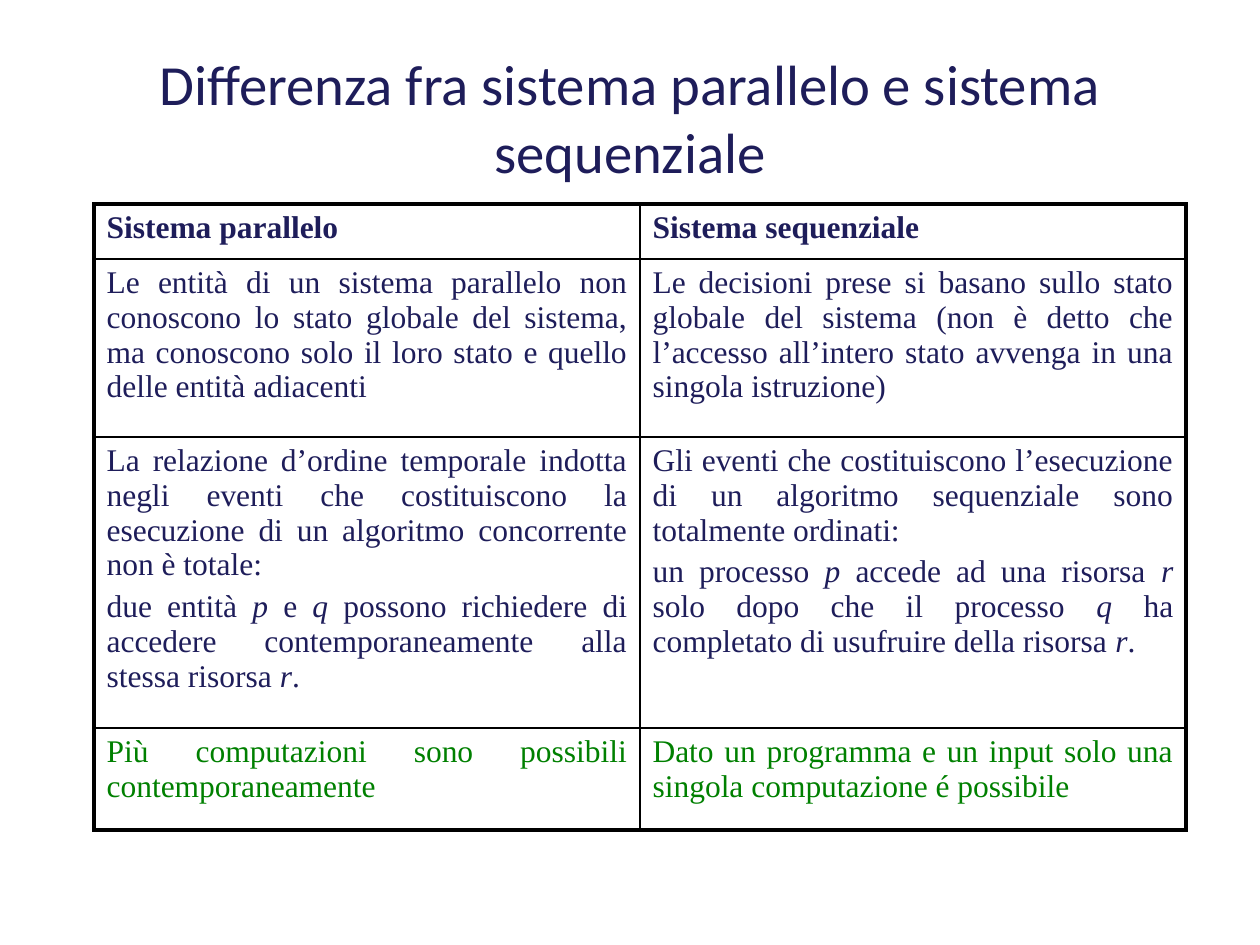
"""Build a slide comparing parallel and sequential systems in a table."""
import pptx
import pptx.dml.color
import pptx.enum.text
import pptx.oxml
import pptx.oxml.ns
import pptx.util

NAVY = pptx.dml.color.RGBColor(0x1E, 0x1D, 0x5A)
GREEN = pptx.dml.color.RGBColor(0x00, 0x80, 0x00)
BLACK = pptx.dml.color.RGBColor(0x00, 0x00, 0x00)
PX = 914400 // 126
THIN, THICK = 1, 2.25

COLUMNS = [546, 546]
ROWS = [
    (55, {"bold": True}, NAVY, [["Sistema parallelo"], ["Sistema sequenziale"]]),
    (178, {}, NAVY, [
        ["Le entità di un sistema parallelo non conoscono lo stato globale del sistema, "
         "ma conoscono solo il loro stato e quello delle entità adiacenti"],
        ["Le decisioni prese si basano sullo stato globale del sistema (non è detto che "
         "l’accesso all’intero stato avvenga in una singola istruzione)"],
    ]),
    (291, {}, NAVY, [
        ["La relazione d’ordine temporale indotta negli eventi che costituiscono la "
         "esecuzione di un algoritmo concorrente non è totale:",
         "due entità *p* e *q* possono richiedere di accedere contemporaneamente alla "
         "stessa risorsa *r*."],
        ["Gli eventi che costituiscono l’esecuzione di un algoritmo sequenziale sono "
         "totalmente ordinati:",
         "un processo *p* accede ad una risorsa *r* solo dopo che il processo *q* ha "
         "completato di usufruire della risorsa *r*."],
    ]),
    (102, {}, GREEN, [
        ["Più computazioni sono possibili contemporaneamente"],
        ["Dato un programma e un input solo una singola computazione é possibile"],
    ]),
]


class SlideBuilder:
    """Hold the text styles and the current slide."""

    title_font = {"name": "Calibri", "size": pptx.util.Pt(32.4), "bold": False}
    body_font = {"name": "Times New Roman", "size": pptx.util.Pt(18), "bold": False}
    paragraph_gap = pptx.util.Pt(4)

    def __init__(self, prs):
        self.s = prs.slides.add_slide(prs.slide_layouts[5])

    def style(self, target, values):
        """Set each named attribute on the target."""
        for name, value in values.items():
            setattr(target, name, value)

    def runs(self, p, text, font, color):
        """Add text to a paragraph, with starred parts in italics."""
        for i, part in enumerate(text.split("*")):
            r = p.add_run()
            r.text = part
            self.style(r.font, {**font, "italic": i % 2 == 1})
            r.font.color.rgb = color

    def title(self, text, left, top, width, height):
        """Place and format the title."""
        sp = self.s.shapes.title
        box = {"left": left, "top": top, "width": width, "height": height}
        self.style(sp, {name: px * PX for name, px in box.items()})
        tf = sp.text_frame
        self.style(tf, {
            "word_wrap": True,
            "auto_size": pptx.enum.text.MSO_AUTO_SIZE.NONE,
            "vertical_anchor": pptx.enum.text.MSO_ANCHOR.MIDDLE,
        })
        p = tf.paragraphs[0]
        p.alignment = pptx.enum.text.PP_ALIGN.CENTER
        self.runs(p, text, self.title_font, NAVY)

    def borders(self, cell, widths):
        """Draw the four borders of a cell."""
        tc_pr = cell._tc.get_or_add_tcPr()
        for side, width in widths.items():
            tc_pr.append(pptx.oxml.parse_xml(
                f'<a:ln{side} {pptx.oxml.ns.nsdecls("a")} w="{pptx.util.Pt(width)}">'
                f'<a:solidFill><a:srgbClr val="{BLACK}"/></a:solidFill></a:ln{side}>'))

    def cell(self, cell, paragraphs, font, color):
        """Fill a cell with justified paragraphs."""
        tf = cell.text_frame
        for i, text in enumerate(paragraphs):
            p = tf.add_paragraph() if i else tf.paragraphs[0]
            p.alignment = pptx.enum.text.PP_ALIGN.JUSTIFY
            if i:
                p.space_before = self.paragraph_gap
            self.runs(p, text, {**self.body_font, **font}, color)

    def table(self, left, top, columns, rows):
        """Add a plain table with a thick frame and thin inner lines."""
        heights = [row[0] for row in rows]
        table = self.s.shapes.add_table(
            len(rows), len(columns), left * PX, top * PX,
            sum(columns) * PX, sum(heights) * PX).table
        self.style(table, {"first_row": False, "horz_banding": False})
        for column, width in zip(table.columns, columns):
            column.width = width * PX
        last_row, last_col = len(rows) - 1, len(columns) - 1
        for i, (height, font, color, texts) in enumerate(rows):
            table.rows[i].height = height * PX
            for j, paragraphs in enumerate(texts):
                cell = table.cell(i, j)
                edges = {"L": j == 0, "R": j == last_col, "T": i == 0, "B": i == last_row}
                self.borders(cell, {k: THICK if v else THIN for k, v in edges.items()})
                cell.fill.background()
                self.cell(cell, paragraphs, font, color)


def main():
    prs = pptx.Presentation()
    prs.slide_width, prs.slide_height = 1260 * PX, 945 * PX
    builder = SlideBuilder(prs)
    builder.title("Differenza fra sistema parallelo e sistema sequenziale", 63, 38, 1134, 158)
    builder.table(94, 204, COLUMNS, ROWS)
    prs.save("out.pptx")


if __name__ == "__main__":
    main()
